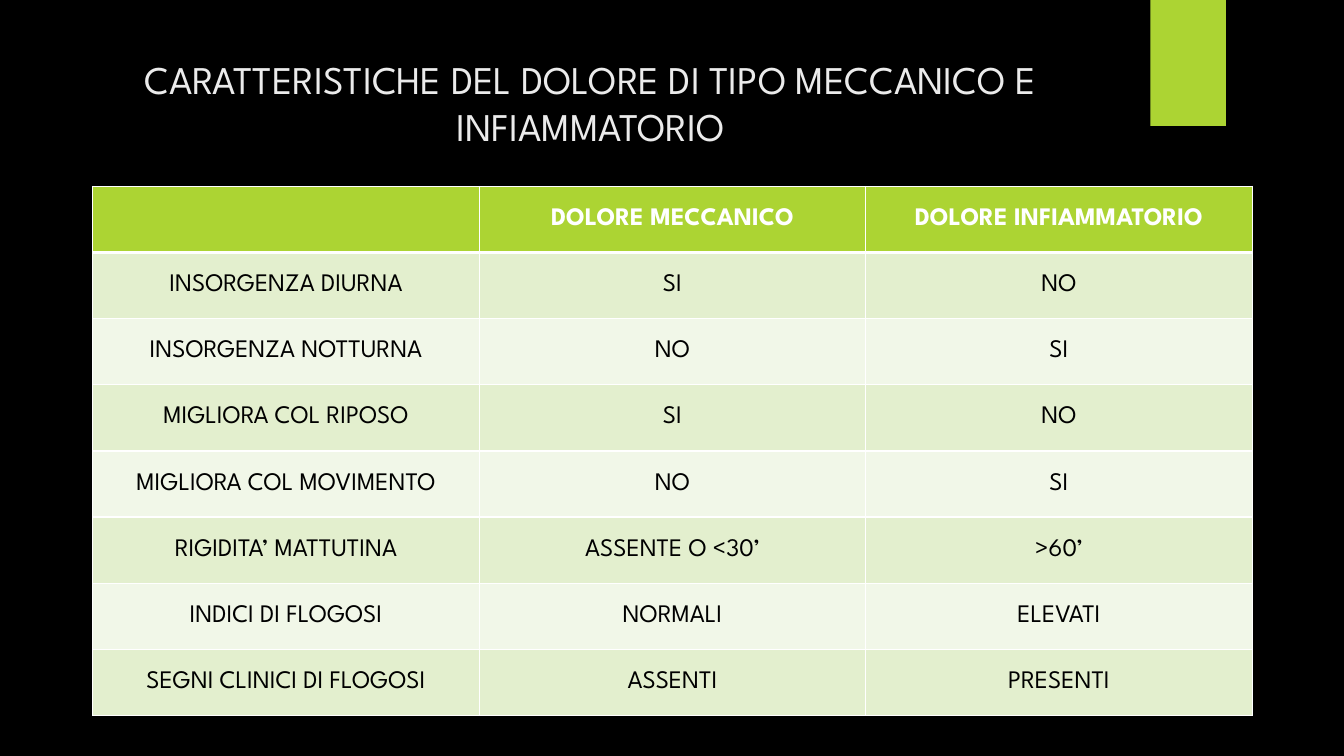
from lxml import etree
from pptx import Presentation
from pptx import util as u
from pptx.dml import color
from pptx.enum import shapes, text
from pptx.oxml import ns

COLORS = {
    "background": "000000",
    "accent": "ACD433",
    "title": "EBEBEB",
    "white": "FFFFFF",
    "black": "000000",
    "dark_band": "E3EFCE",
    "light_band": "F1F7E8",
}

PAIN_FEATURES = [
    ("", "DOLORE MECCANICO", "DOLORE INFIAMMATORIO"),
    ("INSORGENZA DIURNA", "SI", "NO"),
    ("INSORGENZA NOTTURNA", "NO", "SI"),
    ("MIGLIORA COL RIPOSO", "SI", "NO"),
    ("MIGLIORA COL MOVIMENTO", "NO", "SI"),
    ("RIGIDITA’ MATTUTINA", "ASSENTE O <30’", ">60’"),
    ("INDICI DI FLOGOSI", "NORMALI", "ELEVATI"),
    ("SEGNI CLINICI DI FLOGOSI", "ASSENTI", "PRESENTI"),
]


class SlideBuilder:
    """Holds the style and the slide, and draws each kind of element."""

    font_name = "League Spartan"

    def __init__(self, slide):
        self.slide = slide
        self.fill(slide.background, "background")

    def fill(self, target, name):
        target.fill.solid()
        target.fill.fore_color.rgb = color.RGBColor.from_string(COLORS[name])

    def label(self, frame, wording, size, name, bold=False):
        paragraph = frame.paragraphs[0]
        paragraph.text = wording
        paragraph.alignment = text.PP_ALIGN.CENTER
        paragraph.font.name = self.font_name
        paragraph.font.size = u.Pt(size)
        paragraph.font.bold = bold
        paragraph.font.color.rgb = color.RGBColor.from_string(COLORS[name])

    def block(self, left, top, width, height, name):
        tab = self.slide.shapes.add_shape(
            shapes.MSO_SHAPE.RECTANGLE,
            *map(u.Inches, (left, top, width, height)))
        tab.shadow.inherit = False
        self.fill(tab, name)
        tab.line.fill.background()

    def title(self, left, top, width, height, wording):
        heading = self.slide.shapes.add_textbox(
            *map(u.Inches, (left, top, width, height)))
        frame = heading.text_frame
        frame.word_wrap = True
        frame.vertical_anchor = text.MSO_ANCHOR.TOP
        self.label(frame, wording, 28, "title")

    def borders(self, cell, bottom):
        properties = cell._tc.get_or_add_tcPr()
        for side, points in (("L", 1), ("R", 1), ("T", 1), ("B", bottom)):
            edge = etree.SubElement(properties, ns.qn(f"a:ln{side}"), w=str(u.Pt(points)))
            paint = etree.SubElement(edge, ns.qn("a:solidFill"))
            etree.SubElement(paint, ns.qn("a:srgbClr"), val=COLORS["white"])

    def table(self, left, top, width, height, rows):
        grid = self.slide.shapes.add_table(
            len(rows), len(rows[0]),
            *map(u.Inches, (left, top, width, height))).table
        for row, wordings in enumerate(rows):
            header = row == 0
            band = "accent" if header else "dark_band" if row % 2 else "light_band"
            for column, wording in enumerate(wordings):
                cell = grid.cell(row, column)
                self.borders(cell, 3 if header else 1)
                self.fill(cell, band)
                cell.vertical_anchor = text.MSO_ANCHOR.MIDDLE
                self.label(cell.text_frame, wording, 18,
                           "white" if header else "black", header)


def main():
    deck = Presentation()
    deck.slide_width = u.Inches(13.33)
    deck.slide_height = u.Inches(7.5)
    builder = SlideBuilder(deck.slides.add_slide(deck.slide_layouts[6]))
    builder.block(11.41, 0, 0.75, 1.25, "accent")
    builder.title(0.71, 0.5, 10.29, 1.53,
                  "CARATTERISTICHE DEL DOLORE DI TIPO MECCANICO E INFIAMMATORIO")
    builder.table(0.92, 1.85, 11.5, 5.25, PAIN_FEATURES)
    deck.save("out.pptx")


if __name__ == "__main__":
    main()
